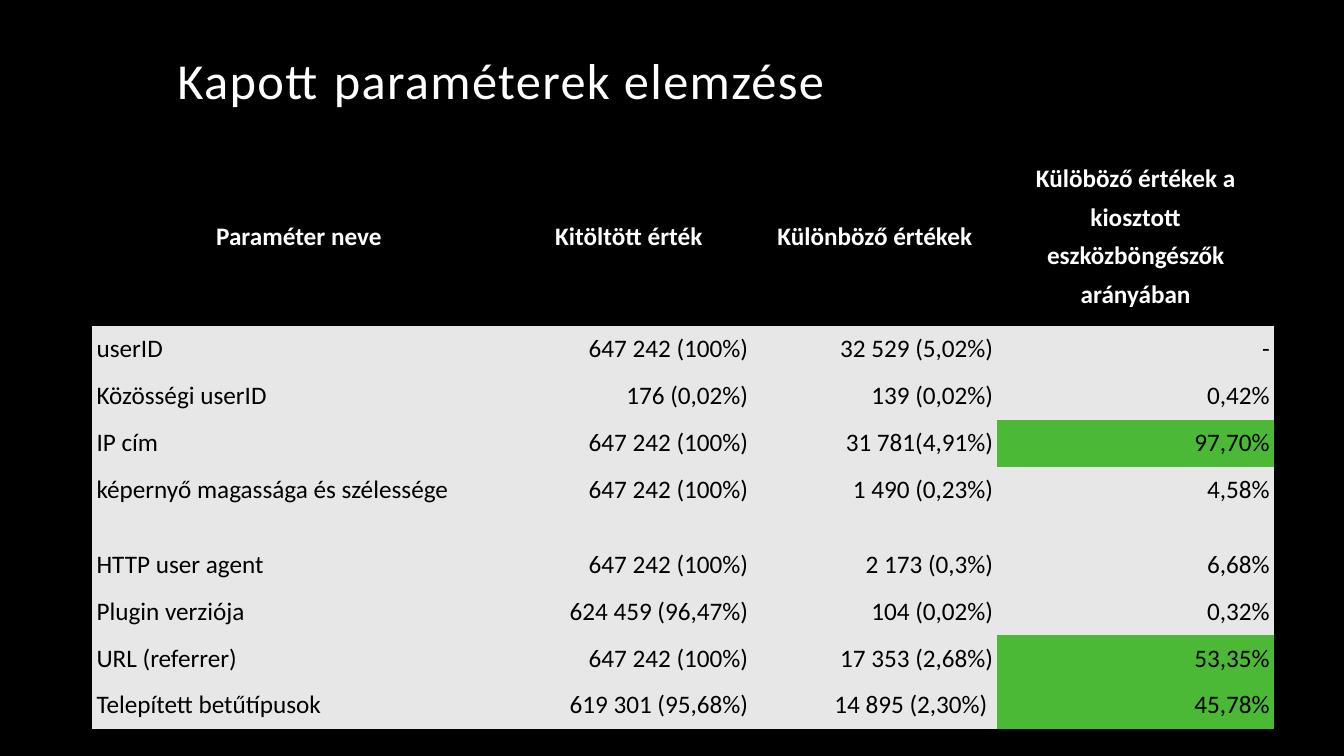
"""Build the slide on the analysis of the received parameters."""
from pptx import Presentation
from pptx.dml.color import RGBColor
from pptx.enum.text import MSO_ANCHOR, MSO_AUTO_SIZE, PP_ALIGN
from pptx.util import Pt

PX = 6350
TITLE_ONLY = 5
NO_STYLE_NO_GRID = "{2D5ABB26-0587-4C30-8999-92F81FD0307C}"
LEFT, CENTER, RIGHT, JUSTIFY = PP_ALIGN.LEFT, PP_ALIGN.CENTER, PP_ALIGN.RIGHT, PP_ALIGN.JUSTIFY
TOP, MIDDLE, BOTTOM = MSO_ANCHOR.TOP, MSO_ANCHOR.MIDDLE, MSO_ANCHOR.BOTTOM
NO_AUTOFIT = MSO_AUTO_SIZE.NONE

COLORS = {"black": "000000", "white": "FFFFFF", "gray": "E7E7E7", "green": "4BB836"}

HEADINGS = ("Paraméter neve", "Kitöltött érték", "Különböző értékek",
            "Külöböző értékek a kiosztott eszközböngészők arányában")
PARAMETERS = [
    ("userID", "647 242 (100%)", "32 529 (5,02%)", "-"),
    ("Közösségi userID", "176 (0,02%)", "139 (0,02%)", "0,42%"),
    ("IP cím", "647 242 (100%)", "31 781(4,91%)", "97,70%"),
    ("képernyő magassága és szélessége", "647 242 (100%)", "1 490 (0,23%)", "4,58%"),
    ("HTTP user agent", "647 242 (100%)", "2 173 (0,3%)", "6,68%"),
    ("Plugin verziója", "624 459 (96,47%)", "104 (0,02%)", "0,32%"),
    ("URL (referrer)", "647 242 (100%)", "17 353 (2,68%)", "53,35%"),
    ("Telepített betűtípusok", "619 301 (95,68%)", "14 895 (2,30%) ", "45,78%"),
]
HIGH_SHARES = {"97,70%", "53,35%", "45,78%"}
COLUMN_WIDTHS = (590, 353, 350, 395)
HEADING_HEIGHT, ROW_HEIGHT, TALL_ROW_HEIGHT = 266, 67, 107
TALL_ROW = 4


def apply_format(target, values):
    """Set every named attribute on the target."""
    for name, value in values.items():
        setattr(target, name, value)


def write_text(paragraph, text, size, color, bold, layout):
    """Add one formatted run to a paragraph."""
    run = paragraph.add_run()
    run.text = text
    apply_format(run.font, {"name": "Calibri", "size": Pt(size), "bold": bold})
    run.font.color.rgb = RGBColor.from_string(COLORS[color])
    apply_format(paragraph, layout)
    return run


presentation = Presentation()
apply_format(presentation, {"slide_width": 1920 * PX, "slide_height": 1080 * PX})
slide = presentation.slides.add_slide(presentation.slide_layouts[TITLE_ONLY])
slide.background.fill.solid()
slide.background.fill.fore_color.rgb = RGBColor.from_string(COLORS["black"])

title = slide.shapes.title
apply_format(title, {"left": 239 * PX, "top": 60 * PX, "width": 1440 * PX, "height": 105 * PX})
apply_format(title.text_frame, {"vertical_anchor": BOTTOM, "word_wrap": True,
                                "auto_size": NO_AUTOFIT})
heading = write_text(title.text_frame.paragraphs[0], "Kapott paraméterek elemzése", 36,
                     "white", False, {"alignment": LEFT, "line_spacing": 0.9})
heading.font._element.set("spc", "100")

row_heights = [HEADING_HEIGHT] + [ROW_HEIGHT] * len(PARAMETERS)
row_heights[TALL_ROW] = TALL_ROW_HEIGHT
results = slide.shapes.add_table(len(row_heights), len(COLUMN_WIDTHS), 132 * PX, 200 * PX,
                                 sum(COLUMN_WIDTHS) * PX, sum(row_heights) * PX).table
apply_format(results, {"first_row": True, "horz_banding": False})
results._tbl.tblPr.xpath("a:tableStyleId")[0].text = NO_STYLE_NO_GRID
for column, width in zip(results.columns, COLUMN_WIDTHS):
    column.width = width * PX
for row, height in zip(results.rows, row_heights):
    row.height = height * PX

for row_index, values in enumerate([HEADINGS] + PARAMETERS):
    is_heading = row_index == 0
    for column_index, value in enumerate(values):
        cell = results.cell(row_index, column_index)
        if is_heading:
            alignment, fill, color = CENTER, "black", "white"
        else:
            alignment = JUSTIFY if column_index == 0 else RIGHT
            fill = "green" if value in HIGH_SHARES else "gray"
            color = "black"
        apply_format(cell, {"margin_left": 6 * PX, "margin_right": 6 * PX,
                            "margin_top": 0, "margin_bottom": 0,
                            "vertical_anchor": MIDDLE if is_heading else TOP})
        cell.fill.solid()
        cell.fill.fore_color.rgb = RGBColor.from_string(COLORS[fill])
        write_text(cell.text_frame.paragraphs[0], value, 18, color, is_heading,
                   {"alignment": alignment, "line_spacing": 1.25})

presentation.save("out.pptx")
